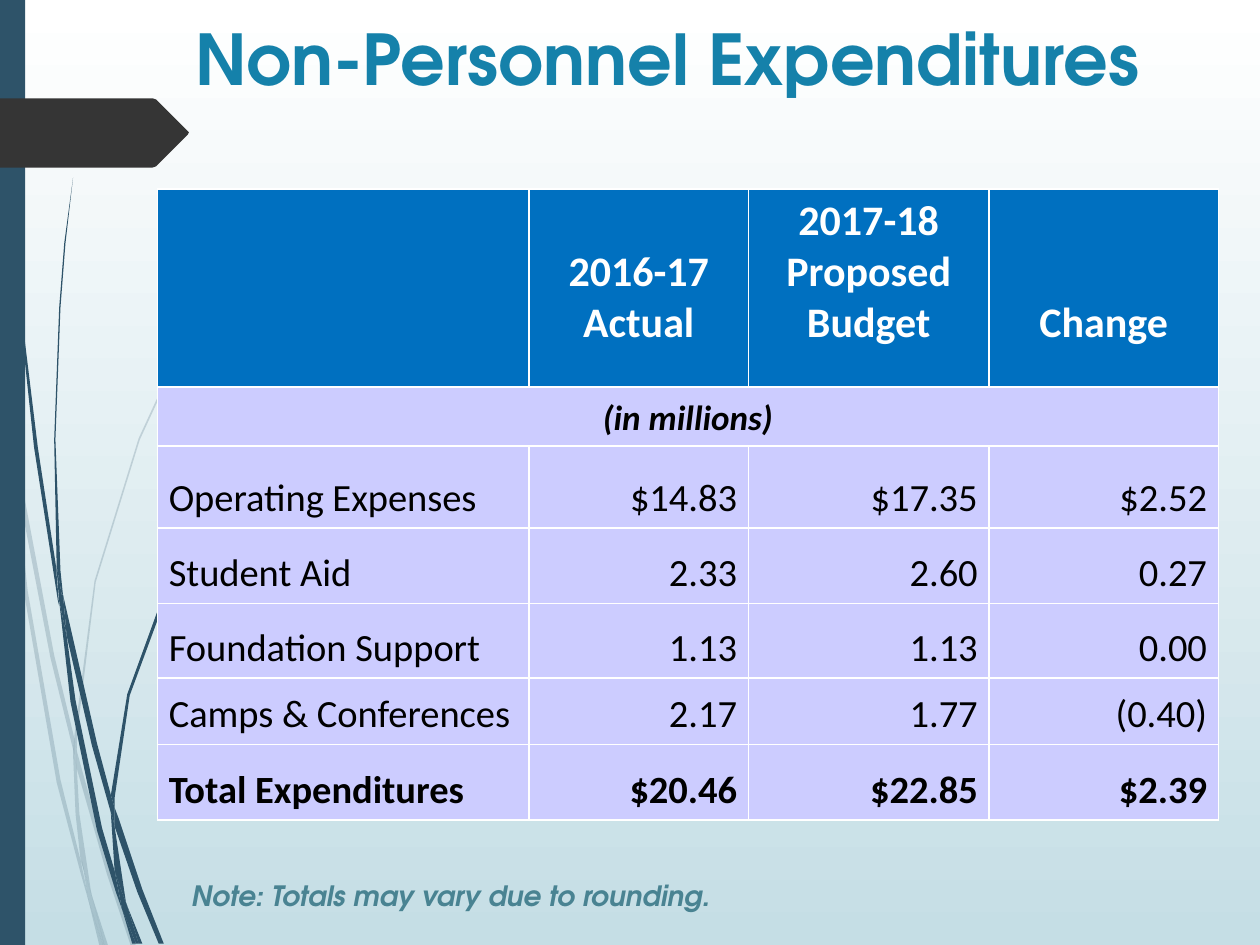
from lxml import etree
from pptx import Presentation
from pptx.dml.color import RGBColor
from pptx.enum.shapes import MSO_SHAPE
from pptx.enum.text import MSO_ANCHOR, PP_ALIGN
from pptx.oxml.ns import qn
from pptx.util import Inches, Pt

RECT = MSO_SHAPE.RECTANGLE
TOP, MIDDLE, BOTTOM = MSO_ANCHOR.TOP, MSO_ANCHOR.MIDDLE, MSO_ANCHOR.BOTTOM
LEFT, CENTER, RIGHT = PP_ALIGN.LEFT, PP_ALIGN.CENTER, PP_ALIGN.RIGHT

COLORS = {
    "white": "FFFFFF", "sky": "C5DEE5", "navy": "2E5369", "dark": "353535",
    "title": "1581AA", "head": "0070C0", "body": "CCCCFF", "black": "000000",
    "note": "498392",
}
TITLE_FONT, TABLE_FONT = "TeX Gyre Adventor", "Calibri"

PALE_WISPS = [
    [(0.08, 3.5), (0.06, 3.22), (0, 2.82), (0, 2.99), (0.07, 3.44)],
    [(0.4, 5.22), (0.59, 5.99), (0.59, 5.86), (0.43, 5.2), (0.1, 3.45),
     (0.12, 3.76)],
    [(0.64, 6.07), (0.61, 5.96), (0.61, 6.1), (0.85, 6.94), (1.04, 7.51),
     (1.08, 7.51), (0.88, 6.92)],
    [(0.83, 7.51), (0.86, 7.51), (0.73, 7.11)],
    [(0.64, 6.83), (0.48, 6.19), (0.22, 4.69), (0.12, 3.76), (0.08, 3.5),
     (0.19, 4.7), (0.45, 6.21), (0.64, 6.93), (0.7, 7.14), (0.69, 7.07)],
    [(0.58, 5.99), (0.6, 6.46), (0.64, 6.83), (0.67, 6.92), (0.73, 7.11),
     (0.72, 7.06), (0.63, 6.46), (0.61, 6.1), (0.61, 6.08)],
    [(0.61, 5.84), (0.76, 4.62), (1.11, 3.49), (1.59, 2.45), (1.87, 1.98),
     (2.01, 1.75), (2.17, 1.54), (2.17, 1.53), (2.01, 1.75), (1.86, 1.97),
     (1.58, 2.44), (1.1, 3.48), (0.75, 4.61), (0.59, 5.84), (0.59, 5.86),
     (0.61, 5.96)],
    [(0.7, 7.14), (0.79, 7.51), (0.82, 7.51)],
    [(0.61, 6.08), (0.61, 6.1), (0.61, 5.96), (0.59, 5.86), (0.58, 5.99)],
    [(0.67, 6.92), (0.65, 6.83), (0.69, 7.07), (0.7, 7.14), (0.82, 7.51),
     (0.83, 7.51), (0.73, 7.11)],
]
DARK_WISPS = [
    [(0.05, 1.1), (0.14, 2.33), (0.27, 3.55), (0.46, 4.77), (0.47, 4.81),
     (0.45, 4.57), (0.45, 4.53), (0.3, 3.55), (0.15, 2.32), (0.06, 1.09),
     (0.04, 0.48), (0.03, 0), (0.02, 0), (0.03, 0.48)],
    [(0.73, 5.92), (0.88, 6.45), (0.88, 6.33), (0.88, 6.31), (0.77, 5.9),
     (0.5, 4.72), (0.53, 5.05)],
    [(0.94, 6.49), (0.91, 6.41), (0.91, 6.56), (1.09, 7.08), (1.26, 7.49),
     (1.3, 7.49), (1.13, 7.06)],
    [(0.91, 6.91), (0.81, 6.57), (0.6, 5.56), (0.53, 5.05), (0.47, 4.77),
     (0.56, 5.57), (0.77, 6.59), (0.92, 7.08), (0.97, 7.22), (0.96, 7.17)],
    [(0.5, 4.72), (0.48, 4.53), (0.44, 3.49), (0.48, 2.44), (0.52, 1.93),
     (0.58, 1.41), (0.51, 1.93), (0.47, 2.44), (0.43, 3.49), (0.45, 4.49),
     (0.49, 4.72)],
    [(1.1, 7.49), (1.13, 7.49), (1.01, 7.19)],
    [(0.47, 4.77), (0.53, 5.05), (0.5, 4.72), (0.49, 4.72), (0.45, 4.49),
     (0.45, 4.53)],
    [(0.91, 6.33), (1.03, 5.52), (1.31, 4.76), (1.69, 4.06), (1.91, 3.74),
     (2.03, 3.59), (2.16, 3.44), (2.15, 3.44), (2.03, 3.58), (1.91, 3.73),
     (1.68, 4.05), (1.29, 4.74), (1.01, 5.51), (0.88, 6.31), (0.91, 6.41)],
    [(0.97, 7.22), (1.05, 7.49), (1.08, 7.49)],
    [(0.88, 6.45), (0.91, 6.91), (0.96, 7.06), (1.01, 7.19), (1, 7.16),
     (0.91, 6.56), (0.9, 6.51)],
    [(0.88, 6.45), (0.9, 6.51), (0.91, 6.56), (0.91, 6.41), (0.88, 6.31),
     (0.88, 6.33)],
    [(0.96, 7.06), (0.91, 6.91), (0.96, 7.17), (0.97, 7.22), (1.08, 7.49),
     (1.1, 7.49), (1.01, 7.19)],
]
ARROW = [(1.49, 1.07), (1.24, 1.32), (1.21, 1.33), (0, 1.33), (0, 0.78),
         (1.21, 0.78), (1.24, 0.79), (1.49, 1.04), (1.5, 1.05)]

COLS = [2.95, 1.74, 1.91, 1.82]
HEIGHTS = [1.57, 0.47, 0.65, 0.6, 0.59, 0.53, 0.6]
HEADS = [[], ["2016-17 Actual"], ["2017-18 Proposed", "Budget"], ["Change"]]
ROWS = [
    ["Operating Expenses", "$14.83", "$17.35", "$2.52"],
    ["Student Aid", "2.33", "2.60", "0.27"],
    ["Foundation Support", "1.13", "1.13", "0.00"],
    ["Camps & Conferences", "2.17", "1.77", "(0.40)"],
    ["Total Expenditures", "$20.46", "$22.85", "$2.39"],
]


class Deck:
    """Holds the style and the current slide."""

    def __init__(self, show):
        self.slide = show.slides.add_slide(show.slide_layouts[6])
        self.shapes = self.slide.shapes

    def color(self, name):
        return RGBColor.from_string(COLORS[name])

    def backdrop(self, start, end):
        fill = self.slide.background.fill
        fill.gradient()
        fill.gradient_angle = 270
        for stop, name in zip(fill.gradient_stops, (start, end)):
            stop.color.rgb = self.color(name)

    def paint(self, shape, name, alpha=100):
        shape.shadow.inherit = False
        shape.line.fill.background()
        shape.fill.solid()
        shape.fill.fore_color.rgb = self.color(name)
        if alpha < 100:
            tint = shape.element.spPr.find(qn("a:solidFill"))[0]
            etree.SubElement(tint, qn("a:alpha"), val=str(alpha * 1000))

    def rect(self, x, y, w, h, name):
        box = map(Inches, (x, y, w, h))
        self.paint(self.shapes.add_shape(RECT, *box), name)

    def outline(self, points, name, alpha=100):
        first, *rest = [(Inches(x), Inches(y)) for x, y in points]
        pen = self.shapes.build_freeform(*first)
        pen.add_line_segments(rest)
        self.paint(pen.convert_to_shape(), name, alpha)

    def fill_in(self, frame, lines, size, name, font, align, bold=False,
                italic=False):
        for i, line in enumerate(lines):
            para = frame.add_paragraph() if i else frame.paragraphs[0]
            para.alignment = align
            run = para.add_run()
            run.text = line
            run.font.size, run.font.name = Pt(size), font
            run.font.bold, run.font.italic = bold, italic
            run.font.color.rgb = self.color(name)

    def text(self, x, y, w, h, line, size, name, align, anchor, wrap,
             italic=False):
        frame = self.shapes.add_textbox(*map(Inches, (x, y, w, h))).text_frame
        frame.word_wrap = wrap
        frame.vertical_anchor = anchor
        self.fill_in(frame, [line], size, name, TITLE_FONT, align, True,
                     italic)

    def cell(self, cell, lines, size, name, fill, align, bold=False,
             italic=False, below=0.05):
        cell.fill.solid()
        cell.fill.fore_color.rgb = self.color(fill)
        cell.vertical_anchor = BOTTOM
        cell.margin_left = cell.margin_right = Inches(0.09)
        cell.margin_top, cell.margin_bottom = Inches(0.05), Inches(below)
        self.fill_in(cell.text_frame, lines, size, name, TABLE_FONT, align,
                     bold, italic)

    def table(self, x, y):
        box = map(Inches, (x, y, sum(COLS), sum(HEIGHTS)))
        grid = self.shapes.add_table(len(HEIGHTS), len(COLS), *box).table
        grid.horz_banding = False
        for col, width in zip(grid.columns, COLS):
            col.width = Inches(width)
        for row, height in zip(grid.rows, HEIGHTS):
            row.height = Inches(height)
        for c, lines in enumerate(HEADS):
            self.cell(grid.cell(0, c), lines, 24, "white", "head", CENTER,
                      True, below=0.3)
        unit = grid.cell(1, 0)
        unit.merge(grid.cell(1, len(COLS) - 1))
        self.cell(unit, ["(in millions)"], 20, "black", "body", CENTER,
                  True, True)
        for r, row in enumerate(ROWS, 2):
            for c, value in enumerate(row):
                self.cell(grid.cell(r, c), [value], 22, "black", "body",
                          RIGHT if c else LEFT, row is ROWS[-1])


def main():
    show = Presentation()
    show.slide_width, show.slide_height = Inches(10), Inches(7.5)
    deck = Deck(show)
    deck.backdrop("white", "sky")
    for wisp in PALE_WISPS:
        deck.outline(wisp, "navy", 20)
    for wisp in DARK_WISPS:
        deck.outline(wisp, "navy")
    deck.rect(0, 0, 0.2, 7.5, "navy")
    deck.outline(ARROW, "dark")
    deck.text(1.17, 0.01, 8.25, 0.9, "Non-Personnel Expenditures", 40,
              "title", CENTER, MIDDLE, True)
    deck.table(1.25, 1.5)
    deck.text(1.42, 6.92, 4.48, 0.37,
              "Note: Totals may vary due to rounding.", 16, "note", LEFT,
              TOP, False, True)
    show.save("out.pptx")


if __name__ == "__main__":
    main()
